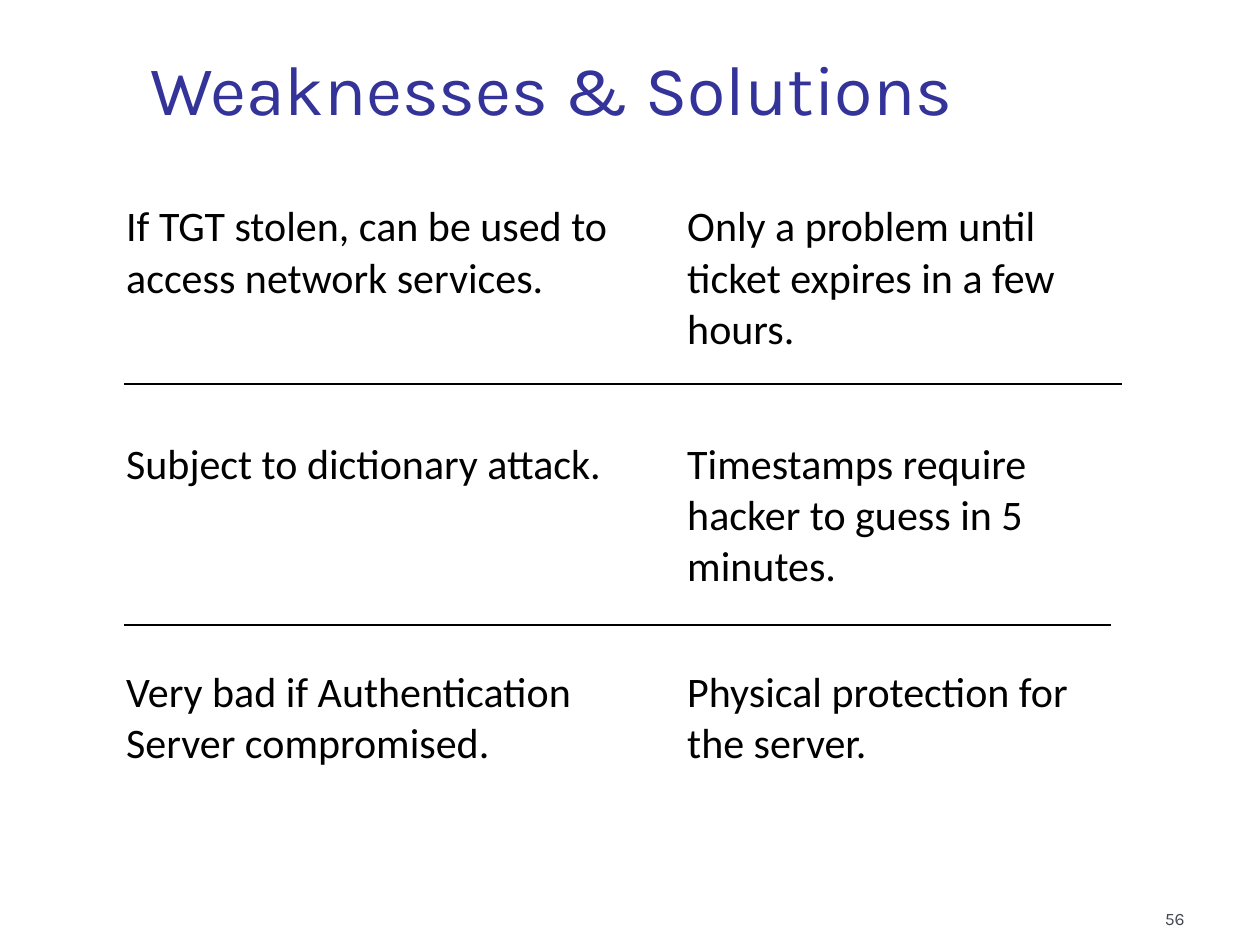
from pptx import Presentation
from pptx.dml.color import RGBColor
from pptx.enum.shapes import MSO_CONNECTOR
from pptx.enum.text import MSO_ANCHOR, MSO_AUTO_SIZE, PP_ALIGN
from pptx.oxml.ns import qn
from pptx.util import Cm, Pt
from lxml.etree import SubElement


def color(value):
    return RGBColor.from_string(value)


def format_paragraph(paragraph, name, size, value, alignment=PP_ALIGN.LEFT):
    paragraph.alignment = alignment
    paragraph.font.name = name
    paragraph.font.size = Pt(size)
    paragraph.font.color.rgb = color(value)


presentation = Presentation()
presentation.slide_width = Cm(25.4)
presentation.slide_height = Cm(19.05)
slide = presentation.slides.add_slide(presentation.slide_layouts[5])

title = slide.shapes.title
title.left, title.top, title.width, title.height = Cm(2.77), Cm(0), Cm(22.28), Cm(2.74)
title.text_frame.text = "Weaknesses & Solutions"
title.text_frame.auto_size = MSO_AUTO_SIZE.NONE
title.text_frame.vertical_anchor = MSO_ANCHOR.BOTTOM
format_paragraph(title.text_frame.paragraphs[0], "Karla", 40, "333399")

rows = [
    (3.76, 0.13, "If TGT stolen, can be used to access network services.",
     "Only a problem until ticket expires in a few hours."),
    (4.32, 1.16, "Subject to dictionary attack.",
     "Timestamps require hacker to guess in 5 minutes."),
    (4.75, 1.44, "Very bad if Authentication Server compromised.",
     "Physical protection for the server."),
]
table = slide.shapes.add_table(3, 2, Cm(2.29), Cm(3.94), Cm(20.1), Cm(12.83)).table
table.first_row = False
table.horz_banding = False
table.columns[0].width = Cm(11.31)
table.columns[1].width = Cm(8.79)
for row_index, (height, top_margin, weakness, solution) in enumerate(rows):
    table.rows[row_index].height = Cm(height)
    for column_index, text in enumerate((weakness, solution)):
        cell = table.cell(row_index, column_index)
        cell.fill.background()
        cell.margin_top = Cm(top_margin)
        cell.margin_bottom = Cm(0)
        cell.text = text
        format_paragraph(cell.text_frame.paragraphs[0], "Calibri", 24, "000000")

for right, top in ((22.61, 7.74), (22.4, 12.6)):
    divider = slide.shapes.add_connector(
        MSO_CONNECTOR.STRAIGHT, Cm(2.51), Cm(top), Cm(right), Cm(top))
    divider.line.color.rgb = color("000000")
    divider.line.width = Pt(0.75)
    SubElement(divider._element.spPr, qn("a:effectLst"))

number = slide.shapes.add_textbox(Cm(18.85), Cm(17.58), Cm(5.28), Cm(1.27))
number.text_frame.word_wrap = True
number.text_frame.vertical_anchor = MSO_ANCHOR.BOTTOM
number.text_frame.text = "56"
format_paragraph(number.text_frame.paragraphs[0], "Karla", 10, "464653", PP_ALIGN.RIGHT)

presentation.save("out.pptx")
